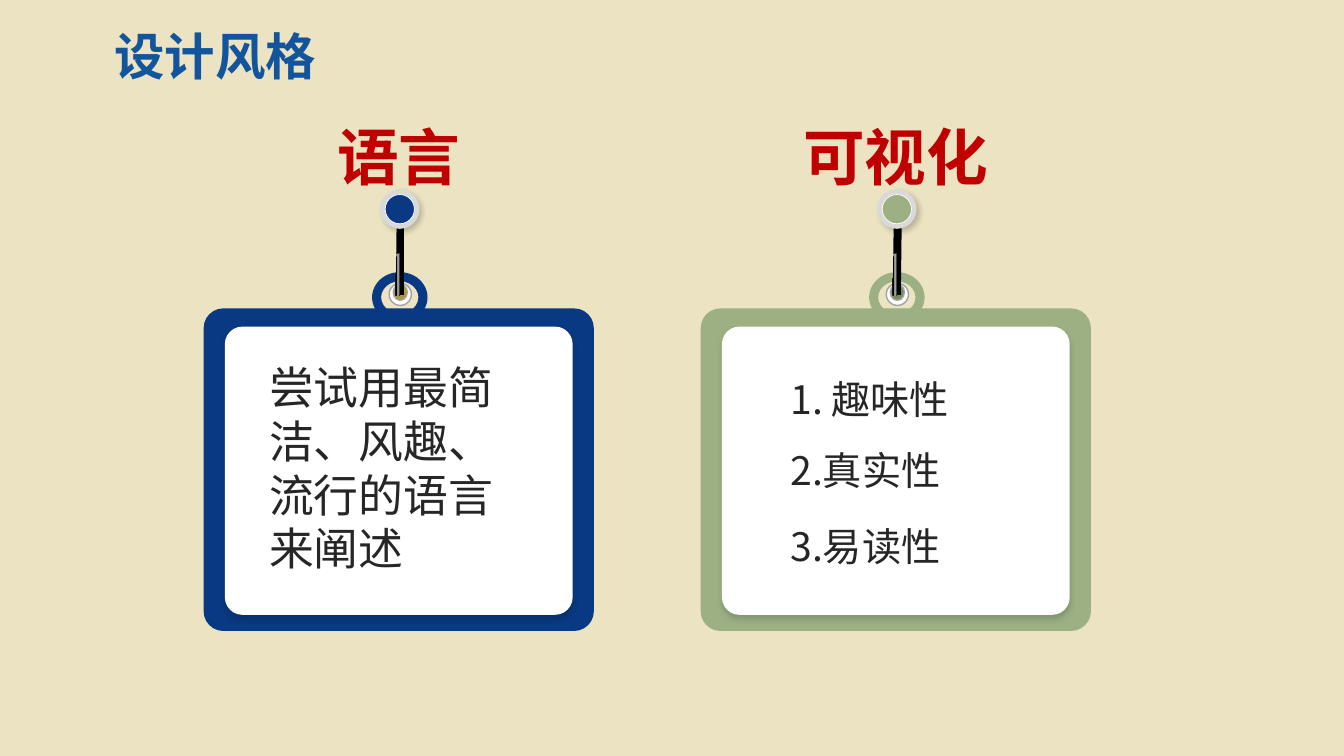
from dataclasses import dataclass

import pptx
import pptx.dml.color
import pptx.enum.shapes
import pptx.enum.text
import pptx.oxml
import pptx.oxml.ns
import pptx.util
from lxml import etree

Inches = pptx.util.Inches
Pt = pptx.util.Pt
Kind = pptx.enum.shapes.MSO_SHAPE
Align = pptx.enum.text.PP_ALIGN
Fit = pptx.enum.text.MSO_AUTO_SIZE
qn = pptx.oxml.ns.qn


@dataclass(frozen=True)
class Theme:
    font: str = "Noto Sans CJK SC"
    background: str = "EBE3C2"
    title: str = "13559D"
    heading: str = "C00000"
    body: str = "262626"
    white: str = "FFFFFF"
    outline: str = "A3A3A3"
    pin: str = "D9D9D9"
    strap_edge: str = "000000"
    strap_middle: str = "C2C2C2"
    shadow: str = "000000"
    title_size: int = 36
    heading_size: int = 44
    sentence_size: int = 32
    item_size: int = 28


@dataclass(frozen=True)
class Shadow:
    opacity: int
    angle: int
    blur: int = 4
    distance: int = 3


@dataclass(frozen=True)
class Note:
    text: str
    left: float
    top: float
    width: float
    height: float
    size: int


@dataclass(frozen=True)
class Card:
    heading: str
    left: float
    color: str
    eyelet: str
    note: Note


def list_item(text: str, top: float) -> Note:
    return Note(text, 7.74, top, 2.6, 0.57, THEME.item_size)


THEME = Theme()
CARD_WIDTH = 3.87
TILT = 90.7
SENTENCE = Note("尝试用最简洁、风趣、流行的语言来阐述", 2.57, 3.52, 2.65, 2.26, THEME.sentence_size)
CARDS = (
    Card("语言", 2.02, "093983", "AF9738", SENTENCE),
    Card("可视化", 6.95, "9CB084", "768D5A", list_item("1. 趣味性", 3.67)),
)
LOWER_ITEMS = (list_item("3.易读性", 5.13), list_item("2.真实性", 4.38))


def rgb(color: str) -> pptx.dml.color.RGBColor:
    return pptx.dml.color.RGBColor.from_string(color)


def add_shadow(shape, shadow: Shadow) -> None:
    effects = shape._element.spPr.find(qn("a:effectLst"))
    outer = etree.SubElement(
        effects, qn("a:outerShdw"), blurRad=str(Pt(shadow.blur)),
        dist=str(Pt(shadow.distance)), dir=str(shadow.angle * 60000),
        algn="ctr", rotWithShape="0")
    color = etree.SubElement(outer, qn("a:srgbClr"), val=THEME.shadow)
    etree.SubElement(color, qn("a:alpha"), val=str(shadow.opacity * 1000))


def add_figure(shapes, kind, left: float, top: float, width: float, height: float, *,
               fill: str, line: str | None = None, weight: float = 1, rotation: float = 0,
               adjustment: float | None = None, shadow: Shadow | None = None):
    shape = shapes.add_shape(kind, Inches(left), Inches(top), Inches(width), Inches(height))
    shape.shadow.inherit = False
    shape.rotation = rotation
    shape.fill.solid()
    shape.fill.fore_color.rgb = rgb(fill)
    if line is None:
        shape.line.fill.background()
    else:
        shape.line.color.rgb = rgb(line)
        shape.line.width = Pt(weight)
    if adjustment is not None:
        shape.adjustments[0] = adjustment
    if shadow:
        add_shadow(shape, shadow)
    return shape


def add_text(shapes, text: str, left: float, top: float, width: float, height: float, *,
             size: int, color: str, bold: bool = False, align=Align.LEFT,
             grow: bool = True) -> None:
    box = shapes.add_textbox(Inches(left), Inches(top), Inches(width), Inches(height))
    frame = box.text_frame
    frame.word_wrap = True
    frame.auto_size = Fit.SHAPE_TO_FIT_TEXT if grow else Fit.NONE
    para = frame.paragraphs[0]
    para.alignment = align
    span = para.add_run()
    span.text = text
    span.font.size = Pt(size)
    span.font.bold = bold
    span.font.color.rgb = rgb(color)
    span.font.name = THEME.font
    etree.SubElement(span.font._element, qn("a:ea"), typeface=THEME.font)


def add_note(shapes, note: Note) -> None:
    add_text(shapes, note.text, note.left, note.top, note.width, note.height,
             size=note.size, color=THEME.body)


def add_strap(shapes, center: float) -> None:
    strap = add_figure(shapes, Kind.RECTANGLE, center - 0.43, 2.46, 0.86, 0.08,
                       fill=THEME.strap_edge, rotation=TILT)
    properties = strap._element.spPr
    stops = "".join(
        f'<a:gs pos="{place * 1000}"><a:srgbClr val="{color}"/></a:gs>'
        for place, color in ((2, THEME.strap_edge), (51, THEME.strap_middle),
                             (98, THEME.strap_edge)))
    gradient = pptx.oxml.parse_xml(
        f'<a:gradFill {pptx.oxml.ns.nsdecls("a")} rotWithShape="1"><a:gsLst>{stops}</a:gsLst>'
        '<a:path path="rect"><a:fillToRect t="100000" r="100000"/></a:path></a:gradFill>')
    properties.replace(properties.find(qn("a:solidFill")), gradient)


def add_card(page, card: Card) -> None:
    shapes = page.shapes.add_group_shape().shapes
    center = card.left + 1.95
    add_figure(shapes, Kind.DONUT, center - 0.28, 2.7, 0.55, 0.5,
               fill=card.color, adjustment=0.18)
    add_figure(shapes, Kind.OVAL, center - 0.11, 2.81, 0.22, 0.22,
               fill=THEME.white, line=THEME.outline)
    add_figure(shapes, Kind.OVAL, center - 0.08, 2.83, 0.16, 0.14,
               fill=card.eyelet, line=THEME.outline, rotation=TILT)
    add_strap(shapes, center)
    add_figure(shapes, Kind.OVAL, center - 0.2, 1.88, 0.39, 0.39,
               fill=THEME.pin, shadow=Shadow(20, 45))
    add_figure(shapes, Kind.OVAL, center - 0.15, 1.93, 0.29, 0.29,
               fill=card.color, line=THEME.white, weight=0.5)
    add_figure(shapes, Kind.ROUNDED_RECTANGLE, card.left, 3.06, CARD_WIDTH, 3.2,
               fill=card.color, adjustment=0.061)
    add_figure(shapes, Kind.ROUNDED_RECTANGLE, card.left + 0.21, 3.24, 3.45, 2.86,
               fill=THEME.white, adjustment=0.061, shadow=Shadow(15, 90))
    add_text(shapes, card.heading, card.left, 1.13, CARD_WIDTH, 0.66,
             size=THEME.heading_size, color=THEME.heading, bold=True,
             align=Align.CENTER, grow=False)
    add_note(shapes, card.note)


def main() -> None:
    deck = pptx.Presentation()
    deck.slide_width = Inches(13.33)
    deck.slide_height = Inches(7.5)
    page = deck.slides.add_slide(deck.slide_layouts[6])
    page.background.fill.solid()
    page.background.fill.fore_color.rgb = rgb(THEME.background)
    for card in CARDS:
        add_card(page, card)
    add_text(page.shapes, "设计风格", 0.24, 0.2, 3.79, 0.71, size=THEME.title_size,
             color=THEME.title, bold=True, align=Align.CENTER)
    for item in LOWER_ITEMS:
        add_note(page.shapes, item)
    deck.save("out.pptx")


if __name__ == "__main__":
    main()
